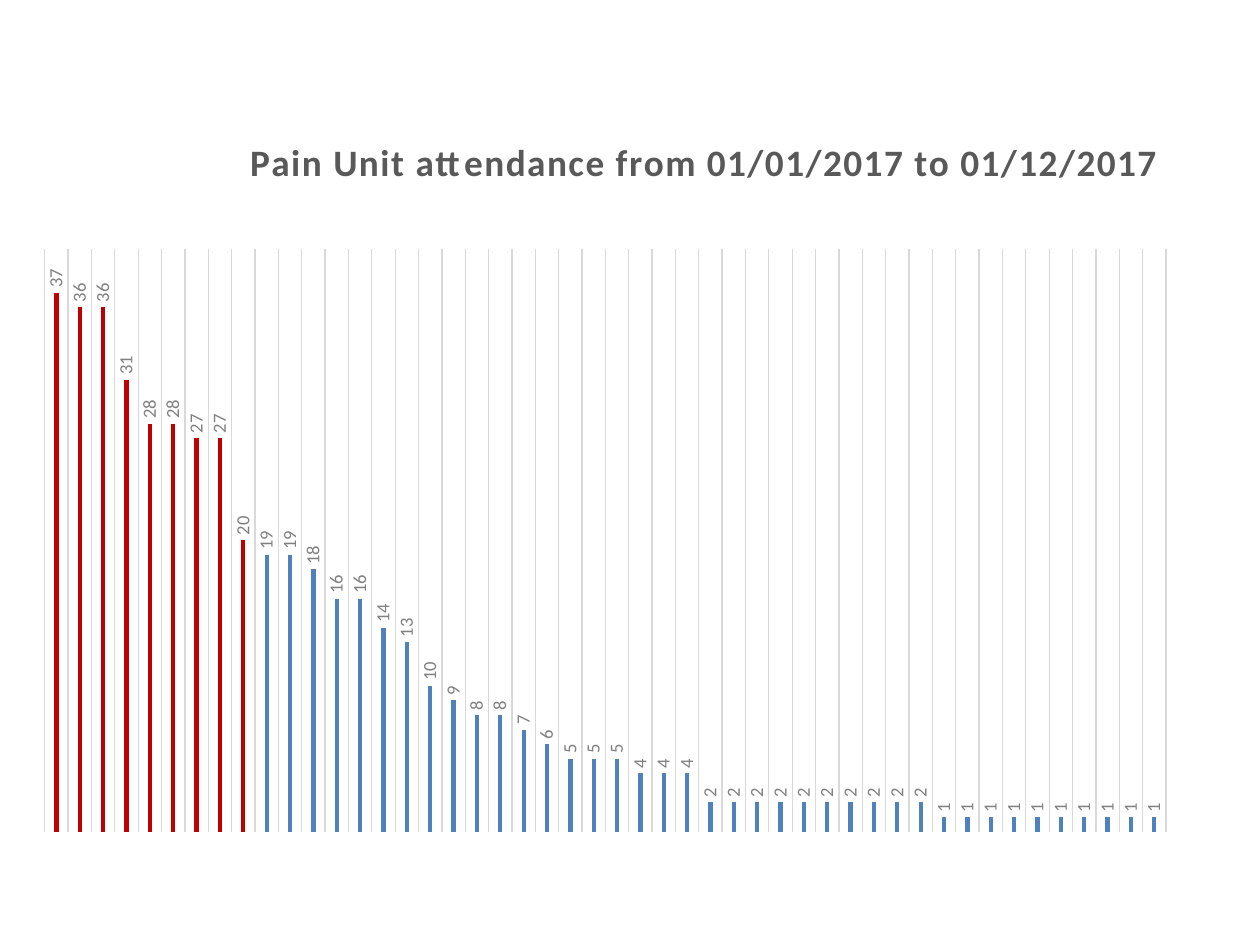
from dataclasses import dataclass

from lxml import etree
from pptx import Presentation
from pptx.chart.chart import Chart
from pptx.chart.data import CategoryChartData
from pptx.dml.color import RGBColor
from pptx.enum.chart import XL_CHART_TYPE, XL_LABEL_POSITION
from pptx.oxml.ns import qn
from pptx.util import Inches, Pt

COLUMNS = XL_CHART_TYPE.COLUMN_CLUSTERED
OUTSIDE_END = XL_LABEL_POSITION.OUTSIDE_END


@dataclass(frozen=True)
class Theme:
    font: str = "Calibri"
    title_size: float = 21.3
    label_size: float = 10.6
    base_size: float = 10
    title: RGBColor = RGBColor(0x59, 0x59, 0x59)
    label: RGBColor = RGBColor(0x80, 0x80, 0x80)
    text: RGBColor = RGBColor(0, 0, 0)
    grid: RGBColor = RGBColor(0xD9, 0xD9, 0xD9)
    bar: RGBColor = RGBColor(0x4F, 0x81, 0xBD)
    frequent_bar: RGBColor = RGBColor(0xC0, 0, 0)


@dataclass(frozen=True)
class Layout:
    """Fractions of the chart area."""
    x: float
    y: float
    w: float | None = None
    h: float | None = None


THEME = Theme()
TITLE = "Pain Unit attendance from 01/01/2017 to 01/12/2017"
FREQUENT_FROM = 20  # attendances that count as frequent
ATTENDANCES = [37, 36, 36, 31, 28, 28, 27, 27, 20, 19, 19, 18, 16, 16, 14, 13,
               10, 9, 8, 8, 7, 6, *[5] * 3, *[4] * 3, *[2] * 10, *[1] * 10]


def set_layout(parent: etree._Element, index: int, layout: Layout) -> None:
    """Place the title or the plot area by hand within the chart."""
    for old in parent.findall(qn("c:layout")):
        parent.remove(old)
    holder = etree.Element(qn("c:layout"))
    parent.insert(index, holder)
    manual = etree.SubElement(holder, qn("c:manualLayout"))
    settings = {"xMode": "edge", "yMode": "edge", "x": layout.x, "y": layout.y}
    if layout.w is not None:
        settings = {"layoutTarget": "inner", **settings, "w": layout.w, "h": layout.h}
    for name, value in settings.items():
        etree.SubElement(manual, qn(f"c:{name}")).set("val", str(value))


def style_title(chart: Chart) -> None:
    chart.has_title = True
    frame = chart.chart_title.text_frame
    frame.text = TITLE
    font = frame.paragraphs[0].font
    font.name, font.size, font.bold = THEME.font, Pt(THEME.title_size), True
    font.color.rgb = THEME.title
    title = chart.element.find(f".//{qn('c:title')}")
    for properties in title.iter(qn("a:defRPr")):
        properties.set("spc", "100")
    set_layout(title, 1, Layout(0.19, 0.04))


def style_axes(chart: Chart) -> None:
    categories, values = chart.category_axis, chart.value_axis
    categories.has_major_gridlines = True
    grid = categories.major_gridlines.format.line
    grid.color.rgb, grid.width = THEME.grid, Pt(0.75)
    values.has_major_gridlines = False
    values.minimum_scale, values.maximum_scale = 0, 40
    categories.visible = values.visible = False


def style_bars(chart: Chart) -> None:
    plot = chart.plots[0]
    plot.gap_width, plot.overlap, plot.vary_by_categories = 444, -90, False
    series = plot.series[0]
    series.format.fill.solid()
    series.format.fill.fore_color.rgb = THEME.bar
    for index, count in enumerate(ATTENDANCES):
        if count >= FREQUENT_FROM:
            fill = series.points[index].format.fill
            fill.solid()
            fill.fore_color.rgb = THEME.frequent_bar

    # Value labels, turned to read upwards
    labels = series.data_labels
    labels.show_value, labels.position = True, OUTSIDE_END
    labels.font.name, labels.font.size = THEME.font, Pt(THEME.label_size)
    labels.font.color.rgb = THEME.label
    body = chart.element.find(f".//{qn('c:dLbls')}//{qn('a:bodyPr')}")
    body.set("rot", "-5400000")
    body.set("vert", "horz")


def main() -> None:
    deck = Presentation()
    deck.slide_width, deck.slide_height = Inches(10), Inches(7.5)
    page = deck.slides.add_slide(deck.slide_layouts[6])

    # Attendance chart, one column per patient
    chart_data = CategoryChartData()
    chart_data.categories = [str(n) for n in range(1, len(ATTENDANCES) + 1)]
    chart_data.add_series("Series 1", ATTENDANCES)
    chart = page.shapes.add_chart(COLUMNS, Inches(0.17), Inches(0.79),
                                  Inches(9.27), Inches(5.93), chart_data).chart
    chart.has_legend = False
    chart.font.name, chart.font.size = THEME.font, Pt(THEME.base_size)
    chart.font.color.rgb = THEME.text
    style_title(chart)
    style_axes(chart)
    style_bars(chart)
    plot_area = chart.element.find(f".//{qn('c:plotArea')}")
    set_layout(plot_area, 0, Layout(0.02, 0.2, 0.96, 0.78))

    deck.save("out.pptx")


if __name__ == "__main__":
    main()
